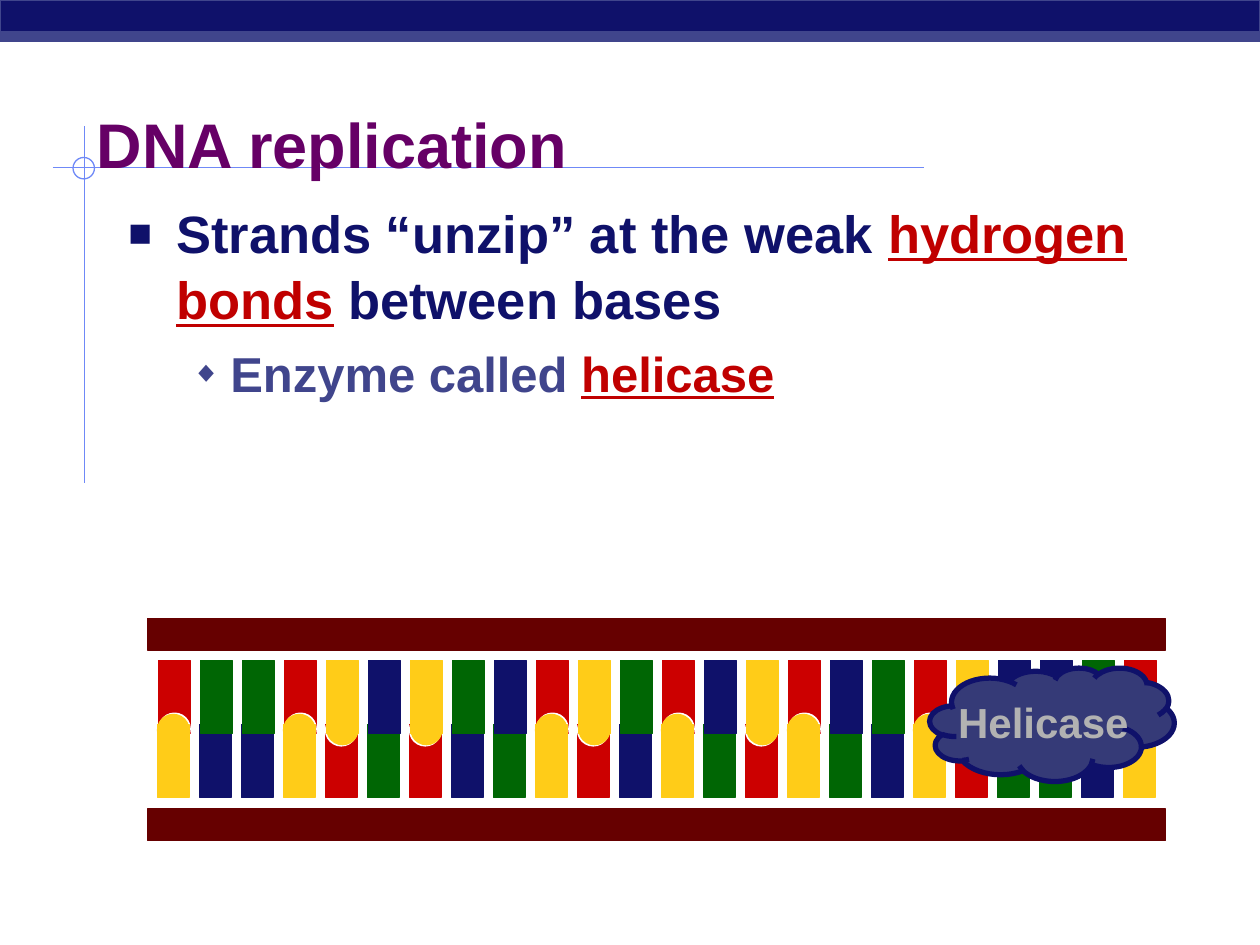
from lxml import etree
from pptx import Presentation
from pptx import util as u
from pptx.dml.color import RGBColor
from pptx.enum import shapes, text
from pptx.oxml.ns import qn

NAVY = RGBColor(0x0F, 0x11, 0x6A)
SLATE = RGBColor(0x40, 0x45, 0x8C)
PERIWINKLE = RGBColor(0x6F, 0x89, 0xF7)
PURPLE = RGBColor(0x66, 0x00, 0x66)
CRIMSON = RGBColor(0xC0, 0x00, 0x00)
MAROON = RGBColor(0x66, 0x00, 0x00)
RED = RGBColor(0xCC, 0x00, 0x00)
GREEN = RGBColor(0x00, 0x66, 0x04)
YELLOW = RGBColor(0xFF, 0xCC, 0x18)
WHITE = RGBColor(0xFF, 0xFF, 0xFF)
CLOUD = RGBColor(0x35, 0x3A, 0x77)
GRAY = RGBColor(0xB2, 0xB2, 0xB2)

RECT = shapes.MSO_SHAPE.RECTANGLE
OVAL = shapes.MSO_SHAPE.OVAL

deck = Presentation()
deck.slide_width = u.Inches(10)
deck.slide_height = u.Inches(7.5)
page = deck.slides.add_slide(deck.slide_layouts[6])


def add_figure(kind, left, top, width, height, fill, line, weight=0.75):
    figure = page.shapes.add_shape(
        kind, u.Inches(left), u.Inches(top), u.Inches(width), u.Inches(height))
    figure.shadow.inherit = False
    if fill is None:
        figure.fill.background()
    else:
        figure.fill.solid()
        figure.fill.fore_color.rgb = fill
    figure.line.color.rgb = line
    figure.line.width = u.Pt(weight)
    return figure


def add_base(left, top, cap_top, color):
    cap = WHITE if color == RED else color
    add_figure(RECT, left, top, 0.25, 0.58, color, color)
    if color in (RED, YELLOW):
        add_figure(OVAL, left, cap_top, 0.25, 0.25, cap, cap)


for x1, y1, x2, y2 in [(0.42, 1.33, 7.33, 1.33), (0.67, 1, 0.67, 3.83)]:
    rule = page.shapes.add_connector(
        shapes.MSO_CONNECTOR.STRAIGHT,
        u.Inches(x1), u.Inches(y1), u.Inches(x2), u.Inches(y2))
    rule.line.color.rgb = PERIWINKLE
    rule.line.width = u.Pt(1)
    etree.SubElement(rule._element.spPr, qn("a:effectLst"))
add_figure(OVAL, 0.58, 1.25, 0.17, 0.17, None, PERIWINKLE)
add_figure(RECT, 0, 0, 10, 0.33, NAVY, SLATE)
add_figure(RECT, 0, 0.25, 10, 0.08, SLATE, SLATE)

title = page.shapes.add_textbox(
    u.Inches(0.67), u.Inches(0.75), u.Inches(8.5), u.Inches(0.83))
title.text_frame.word_wrap = True
title.text_frame.margin_top = u.Inches(0.09)
para = title.text_frame.paragraphs[0]
para.text = "DNA replication"
para.font.name = "Arial"
para.font.size = u.Pt(36)
para.font.bold = True
para.font.color.rgb = PURPLE

COLORS = {"R": RED, "G": GREEN, "B": NAVY, "Y": YELLOW}
PARTNERS = {"R": "Y", "Y": "R", "G": "B", "B": "G"}
UPPER_STRAND = "RGGRYBYGBRYGRBYRBGRYBBGR"

for top in (6.42, 4.91):
    add_figure(RECT, 1.17, top, 8.08, 0.25, MAROON, MAROON)
for column, base in enumerate(UPPER_STRAND):
    upper = (1.26 + column / 3, 5.24, 5.66, COLORS[base])
    lower = (1.25 + column / 3, 5.75, 5.67, COLORS[PARTNERS[base]])
    for placement in (upper, lower) if base == "R" else (lower, upper):
        add_base(*placement)

body = page.shapes.add_textbox(
    u.Inches(0.92), u.Inches(1.5), u.Inches(8.42), u.Inches(2.33))
body.text_frame.word_wrap = True
body.text_frame.margin_top = u.Inches(0.07)
bullets = [
    (0, 0.38, 0.38, "■", 75, NAVY, 30, 0,
     [("Strands “unzip” at the weak ", False), ("hydrogen bonds", True),
      (" between bases", False)]),
    (1, 0.81, 0.31, "◆", 60, SLATE, 28, 6,
     [("Enzyme called ", False), ("helicase", True)]),
]
for level, indent, hang, mark, scale, color, size, gap, spans in bullets:
    para = body.text_frame.add_paragraph() if level else body.text_frame.paragraphs[0]
    para.level = level
    props = para._p.get_or_add_pPr()
    props.set("marL", str(u.Inches(indent)))
    props.set("indent", str(-u.Inches(hang)))
    tint = etree.SubElement(props, qn("a:buClr"))
    etree.SubElement(tint, qn("a:srgbClr"), val=str(color))
    etree.SubElement(props, qn("a:buSzPct"), val=str(scale * 1000))
    etree.SubElement(props, qn("a:buFont"), typeface="Arial")
    etree.SubElement(props, qn("a:buChar"), char=mark)
    para.line_spacing = 1.05
    para.space_before = u.Pt(gap)
    para.font.name = "Arial"
    para.font.size = u.Pt(size)
    para.font.bold = True
    for words, is_key in spans:
        span = para.add_run()
        span.text = words
        span.font.color.rgb = CRIMSON if is_key else color
        span.font.underline = is_key

helicase = add_figure(shapes.MSO_SHAPE.CLOUD, 7.38, 5.3, 1.94, 0.9, CLOUD, NAVY, 3)
helicase.text_frame.word_wrap = False
helicase.text_frame.vertical_anchor = text.MSO_ANCHOR.MIDDLE
para = helicase.text_frame.paragraphs[0]
para.text = "Helicase"
para.alignment = text.PP_ALIGN.CENTER
para.font.name = "Arial"
para.font.size = u.Pt(24)
para.font.bold = True
para.font.color.rgb = GRAY

deck.save("out.pptx")
